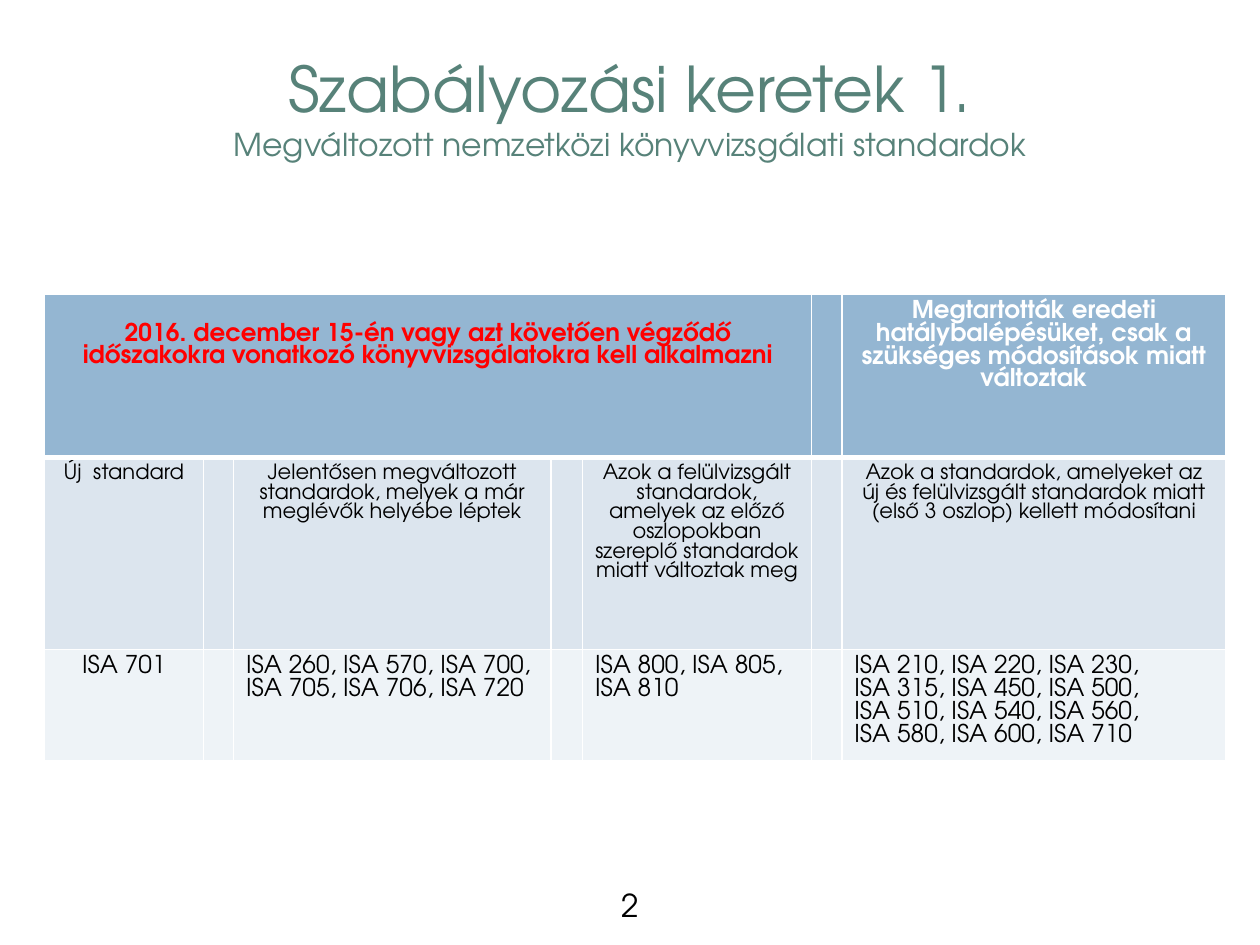
import dataclasses

import pptx
import pptx.dml.color
import pptx.enum.text
import pptx.oxml
import pptx.oxml.ns
import pptx.util

Pt = pptx.util.Pt
ALIGN = pptx.enum.text.PP_ALIGN
ANCHOR = pptx.enum.text.MSO_ANCHOR


@dataclasses.dataclass(frozen=True)
class Theme:
    font: str = "TeX Gyre Adventor"
    title: str = "578279"
    text: str = "000000"
    white: str = "FFFFFF"
    alert: str = "FF0000"
    row_fills: tuple = ("94B6D2", "DCE5EE", "EEF3F7")
    title_size: float = 36
    subtitle_size: float = 18
    cell_size: float = 14
    label_size: float = 12
    leading: float = 0.93


THEME = Theme()
COLUMNS = [90.8, 17, 181.4, 18, 131, 17.2, 219.6]
ROWS = [93.6, 109.4, 64]
HEADERS = {
    0: ("2016. december 15-én vagy azt követően végződő időszakokra "
        "vonatkozó könyvvizsgálatokra kell alkalmazni", THEME.alert),
    6: ("Megtartották eredeti hatálybalépésüket, csak a szükséges "
        "módosítások miatt változtak", THEME.white),
}
LABELS = {
    0: "Új  standard",
    2: "Jelentősen megváltozott standardok, melyek a már meglévők helyébe léptek",
    4: "Azok a felülvizsgált standardok, amelyek az előző oszlopokban "
       "szereplő standardok miatt változtak meg",
    6: "Azok a standardok, amelyeket az új és felülvizsgált standardok miatt "
       "(első 3 oszlop) kellett módosítani",
}
STANDARDS = {
    0: ["ISA 701"],
    2: ["ISA 260, ISA 570, ISA 700, ISA 705, ISA 706, ISA 720"],
    4: ["ISA 800, ISA 805, ISA 810"],
    6: ["ISA 210, ISA 220, ISA 230,", "ISA 315, ISA 450, ISA 500,",
        "ISA 510, ISA 540, ISA 560,", "ISA 580, ISA 600, ISA 710"],
}


def rgb(value):
    return pptx.dml.color.RGBColor.from_string(value)


def add_span(para, text, size, color, bold=False):
    span = para.add_run()
    span.text = text
    span.font.name = THEME.font
    span.font.size = Pt(size)
    span.font.bold = bold
    span.font.color.rgb = rgb(color)


def add_centred_box(page, left, top, width, height, anchor):
    """Add a wrapping text box and return its centred first paragraph."""
    frame = page.shapes.add_textbox(Pt(left), Pt(top), Pt(width), Pt(height)).text_frame
    frame.word_wrap = True
    frame.vertical_anchor = anchor
    para = frame.paragraphs[0]
    para.alignment = ALIGN.CENTER
    return para


def add_title(page, left, top, width, height):
    para = add_centred_box(page, left, top, width, height, ANCHOR.MIDDLE)
    add_span(para, "Szabályozási keretek 1.", THEME.title_size, THEME.title)
    para.add_line_break()
    add_span(para, "Megváltozott nemzetközi könyvvizsgálati standardok",
             THEME.subtitle_size, THEME.title)


def add_page_number(page, left, top, width, height):
    para = add_centred_box(page, left, top, width, height, ANCHOR.TOP)
    add_span(para, "2", THEME.subtitle_size, THEME.text)


def fill_cell(cell, lines, size, color, align, bold=False):
    frame = cell.text_frame
    for index, line in enumerate(lines):
        para = frame.add_paragraph() if index else frame.paragraphs[0]
        para.alignment = align
        para.line_spacing = Pt(round(size * THEME.leading, 1))
        add_span(para, line, size, color, bold)


def style_cell(cell, row):
    """Draw the white rules and the row fill; the rule under the header is thick."""
    properties = cell._tc.get_or_add_tcPr()
    widths = {"L": 1, "R": 1, "T": 3 if row == 1 else 1, "B": 3 if row == 0 else 1}
    for side, width in widths.items():
        properties.append(pptx.oxml.parse_xml(
            f'<a:ln{side} {pptx.oxml.ns.nsdecls("a")} w="{Pt(width)}"><a:solidFill>'
            f'<a:srgbClr val="{THEME.white}"/></a:solidFill></a:ln{side}>'))
    cell.fill.solid()
    cell.fill.fore_color.rgb = rgb(THEME.row_fills[row])


def add_standards_table(page, left, top):
    table = page.shapes.add_table(len(ROWS), len(COLUMNS), Pt(left), Pt(top),
                                  Pt(sum(COLUMNS)), Pt(sum(ROWS))).table
    table.horz_banding = False
    for column, width in zip(table.columns, COLUMNS):
        column.width = Pt(width)
    for index, height in enumerate(ROWS):
        table.rows[index].height = Pt(height)
        for cell in table.rows[index].cells:
            style_cell(cell, index)
    table.cell(0, 0).merge(table.cell(0, 4))
    table.cell(0, 0).margin_top = Pt(16.6)

    for column, (text, color) in HEADERS.items():
        fill_cell(table.cell(0, column), [text], THEME.cell_size, color,
                  ALIGN.CENTER, bold=True)
    for column, text in LABELS.items():
        fill_cell(table.cell(1, column), [text], THEME.label_size, THEME.text,
                  ALIGN.CENTER)
    for column, lines in STANDARDS.items():
        fill_cell(table.cell(2, column), lines, THEME.cell_size, THEME.text,
                  ALIGN.LEFT if column else ALIGN.CENTER)


def main():
    deck = pptx.Presentation()
    deck.slide_width, deck.slide_height = Pt(720), Pt(540)
    page = deck.slides.add_slide(deck.slide_layouts[6])
    add_title(page, 36, 15.8, 648, 90)
    add_standards_table(page, 25.4, 168)
    add_page_number(page, 14.4, 502.6, 692, 28.8)
    deck.save("out.pptx")


if __name__ == "__main__":
    main()
